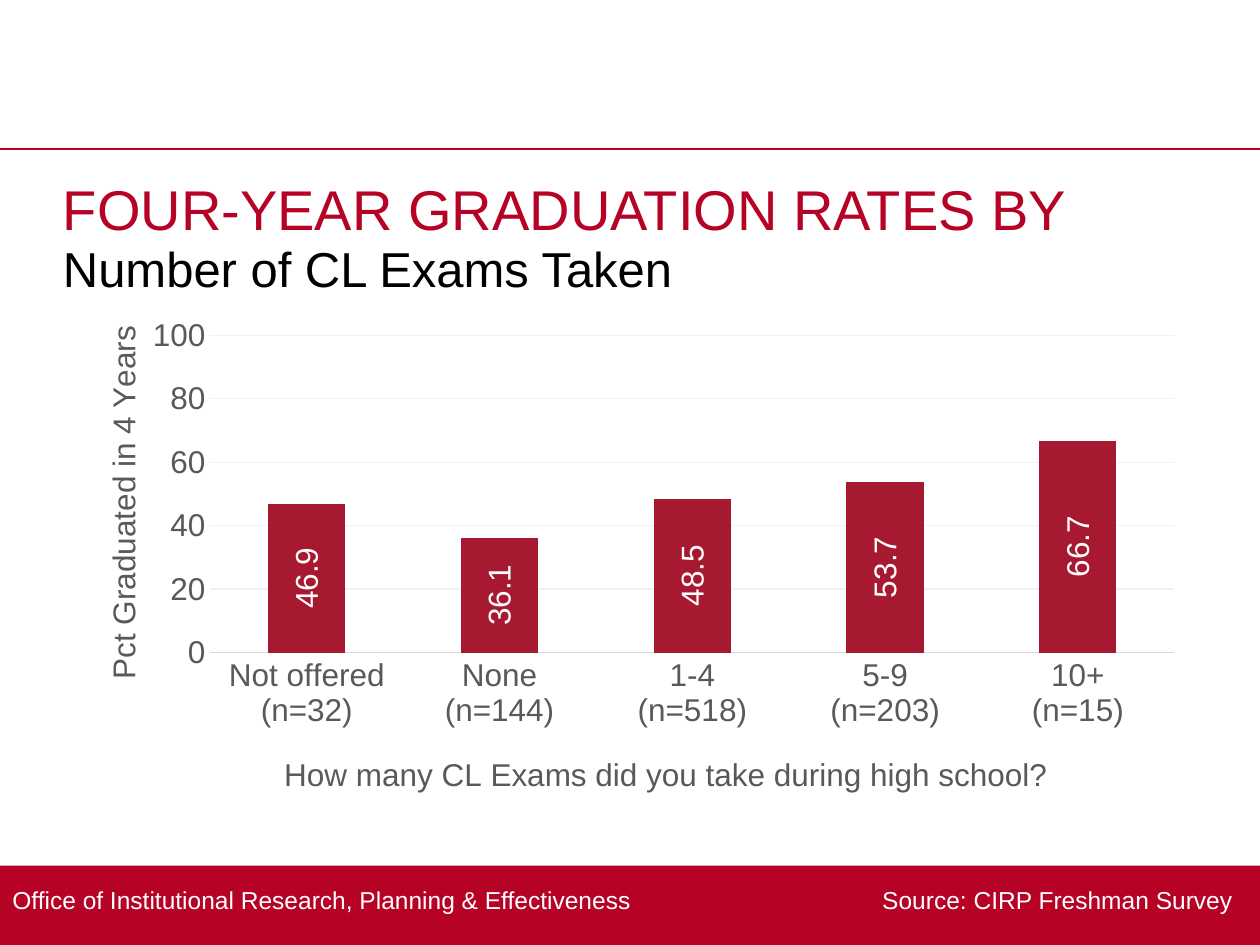
import pptx
import pptx.chart.data
import pptx.dml.color
import pptx.enum.chart
import pptx.enum.shapes
import pptx.enum.text
import pptx.oxml
import pptx.oxml.ns
import pptx.util
from pptx.util import Cm, Pt

RED = pptx.dml.color.RGBColor(0xB6, 0x02, 0x25)
BAR_RED = pptx.dml.color.RGBColor(0xA7, 0x19, 0x30)
BLACK = pptx.dml.color.RGBColor(0, 0, 0)
WHITE = pptx.dml.color.RGBColor(0xFF, 0xFF, 0xFF)
GRAY = pptx.dml.color.RGBColor(0x59, 0x59, 0x59)
AXIS_GRAY = pptx.dml.color.RGBColor(0xD9, 0xD9, 0xD9)
GRID_GRAY = pptx.dml.color.RGBColor(0xF2, 0xF2, 0xF2)

SLIDE_WIDTH, SLIDE_HEIGHT = Cm(25.4), Cm(19.05)
MARGIN = Cm(1.27)
CONTENT_WIDTH = SLIDE_WIDTH - 2 * MARGIN
UPWARD = "-5400000"

GRADUATION_RATES = {
    "Not offered\n(n=32)": 46.9,
    "None\n(n=144)": 36.1,
    "1-4\n(n=518)": 48.5,
    "5-9\n(n=203)": 53.7,
    "10+\n(n=15)": 66.7,
}


def style_font(font, size, color):
    font.name = "Arial"
    font.size = Pt(size)
    font.bold = False
    font.color.rgb = color


def add_text(slide, left, top, width, height, text, size, color, top_inset=0):
    text_box = slide.shapes.add_textbox(left, top, width, height)
    frame = text_box.text_frame
    frame.word_wrap = True
    frame.margin_left = frame.margin_right = frame.margin_bottom = 0
    frame.margin_top = top_inset
    frame.text = text
    style_font(frame.paragraphs[0].runs[0].font, size, color)
    return text_box


def add_header(slide, top):
    rule = slide.shapes.add_connector(
        pptx.enum.shapes.MSO_CONNECTOR.STRAIGHT, 0, top, SLIDE_WIDTH, top)
    rule.line.color.rgb = RED
    rule.line.width = Pt(1)
    rule._element.spPr.append(pptx.oxml.parse_xml(
        f"<a:effectLst {pptx.oxml.ns.nsdecls('a')}/>"))
    add_text(slide, MARGIN, top + Cm(1.7), CONTENT_WIDTH, Cm(1.14),
             "Number of CL Exams Taken", 28, BLACK, Cm(0.1))
    add_text(slide, MARGIN, top + Cm(0.28), CONTENT_WIDTH, Cm(2.2),
             "FOUR-YEAR GRADUATION RATES BY", 32, RED, Cm(0.23))


def add_footer(slide, top, height):
    bar = slide.shapes.add_shape(
        pptx.enum.shapes.MSO_SHAPE.RECTANGLE, 0, top, SLIDE_WIDTH, height)
    bar.shadow.inherit = False
    bar.fill.solid()
    bar.fill.fore_color.rgb = RED
    bar.line.fill.background()

    text_box = add_text(
        slide, 0, top + Cm(0.03), SLIDE_WIDTH, Cm(1.3),
        "Office of Institutional Research, Planning & Effectiveness"
        "\tSource: CIRP Freshman Survey", 14, WHITE)
    frame = text_box.text_frame
    frame.margin_left = frame.margin_right = Cm(0.25)
    frame.vertical_anchor = pptx.enum.text.MSO_ANCHOR.MIDDLE
    properties = frame.paragraphs[0]._p.get_or_add_pPr()
    properties.append(pptx.oxml.parse_xml(
        f"<a:tabLst {pptx.oxml.ns.nsdecls('a')}>"
        f'<a:tab pos="{Cm(24.6)}" algn="r"/></a:tabLst>'))


def set_layout(element, position, **values):
    """Fix the place of a chart part, in fractions of the chart's size."""
    for old_layout in element.findall(pptx.oxml.ns.qn("c:layout")):
        element.remove(old_layout)
    target = '<c:layoutTarget val="inner"/>' if "w" in values else ""
    modes = "".join(f'<c:{key}Mode val="edge"/>' for key in "xy")
    numbers = "".join(f'<c:{key} val="{value}"/>' for key, value in values.items())
    element.insert(position, pptx.oxml.parse_xml(
        f"<c:layout {pptx.oxml.ns.nsdecls('c')}><c:manualLayout>"
        f"{target}{modes}{numbers}</c:manualLayout></c:layout>"))


def style_axis(axis, title, x, y):
    axis.major_tick_mark = axis.minor_tick_mark = pptx.enum.chart.XL_TICK_MARK.NONE
    style_font(axis.tick_labels.font, 18, GRAY)
    frame = axis.axis_title.text_frame
    frame.text = title
    style_font(frame.paragraphs[0].runs[0].font, 18, GRAY)
    set_layout(axis.axis_title._element, 1, x=x, y=y)


def add_rates_chart(slide, left, top, width, height):
    chart_data = pptx.chart.data.CategoryChartData()
    chart_data.categories = GRADUATION_RATES.keys()
    chart_data.add_series("Series 1", GRADUATION_RATES.values())
    chart = slide.shapes.add_chart(
        pptx.enum.chart.XL_CHART_TYPE.COLUMN_CLUSTERED,
        left, top, width, height, chart_data).chart
    chart.has_legend = chart.has_title = False
    style_font(chart.font, 18, BLACK)
    set_layout(chart._chartSpace.chart.plotArea, 0, x=0.13, y=0.05, w=0.85, h=0.63)

    category_axis, value_axis = chart.category_axis, chart.value_axis
    style_axis(category_axis, "How many CL Exams did you take during high school?", 0.19, 0.87)
    category_axis.format.line.color.rgb = AXIS_GRAY
    category_axis.format.line.width = Pt(0.75)
    style_axis(value_axis, "Pct Graduated in 4 Years", 0.03, 0.02)
    value_axis.axis_title.text_frame._txBody.bodyPr.set("rot", UPWARD)
    value_axis.minimum_scale, value_axis.maximum_scale = 0, 100
    value_axis.major_unit = 20
    value_axis.format.line.fill.background()
    grid_line = value_axis.major_gridlines.format.line
    grid_line.color.rgb = GRID_GRAY
    grid_line.width = Pt(0.75)

    plot = chart.plots[0]
    plot.vary_by_categories = False
    plot.gap_width, plot.overlap = 150, -27
    series = plot.series[0]
    series.format.fill.solid()
    series.format.fill.fore_color.rgb = BAR_RED
    labels = series.data_labels
    labels.show_value = True
    labels.number_format = "#,##0.0"
    labels.number_format_is_linked = False
    labels.position = pptx.enum.chart.XL_LABEL_POSITION.CENTER
    style_font(labels.font, 18, WHITE)
    label_body = labels._element.find(".//" + pptx.oxml.ns.qn("a:bodyPr"))
    label_body.set("rot", UPWARD)
    label_body.set("vert", "horz")


def main():
    presentation = pptx.Presentation()
    presentation.slide_width, presentation.slide_height = SLIDE_WIDTH, SLIDE_HEIGHT
    slide = presentation.slides.add_slide(presentation.slide_layouts[6])
    add_footer(slide, Cm(17.45), Cm(1.6))
    add_header(slide, Cm(3))
    add_rates_chart(slide, MARGIN, Cm(6.25), CONTENT_WIDTH, Cm(10.16))
    presentation.save("out.pptx")


if __name__ == "__main__":
    main()
